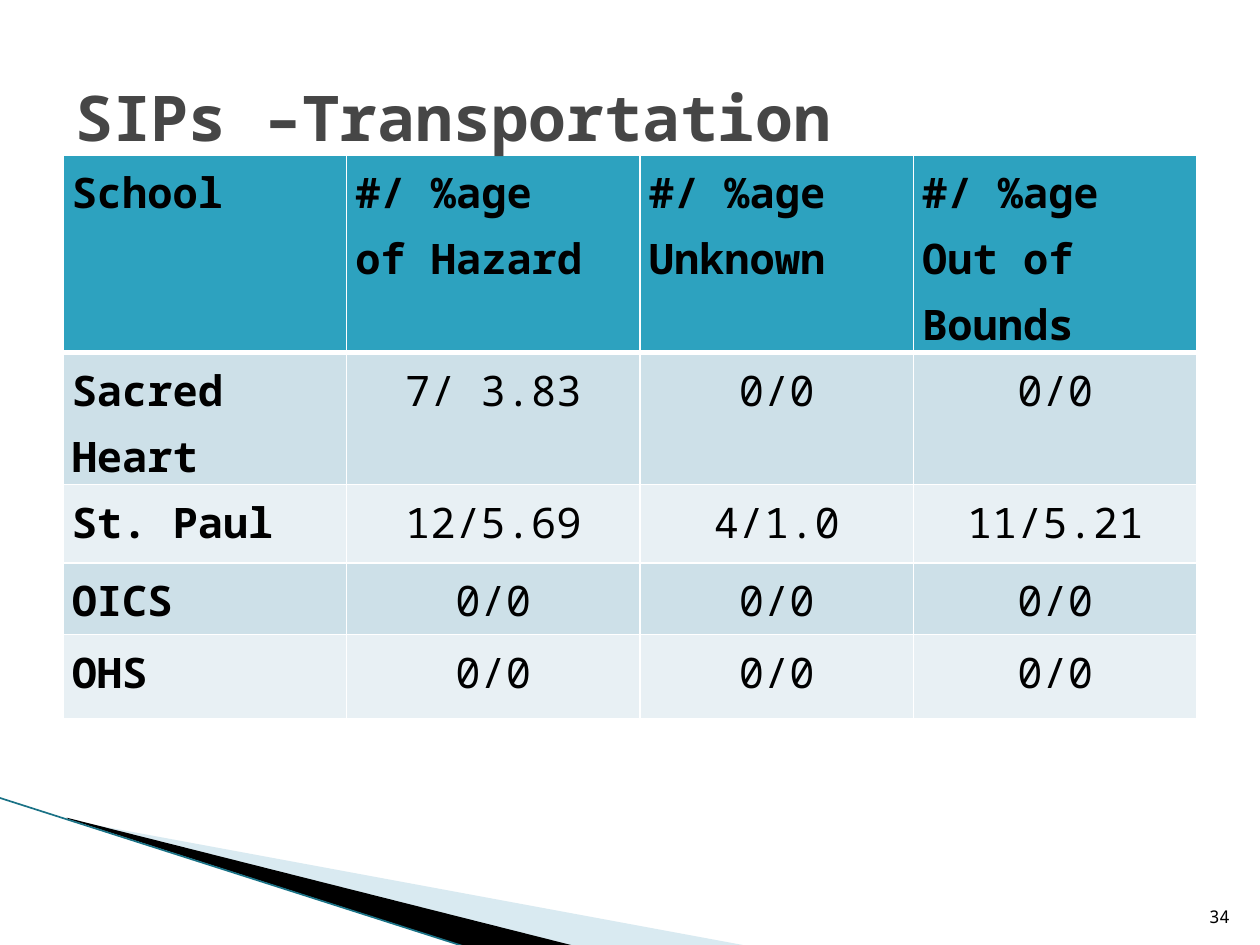
from dataclasses import dataclass
from typing import Optional

from lxml import etree
from pptx import Presentation
from pptx.dml.color import RGBColor
from pptx.enum.shapes import MSO_CONNECTOR
from pptx.enum.text import MSO_ANCHOR, PP_ALIGN
from pptx.oxml.ns import qn
from pptx.util import Inches, Pt

LEFT, CENTER, RIGHT = PP_ALIGN.LEFT, PP_ALIGN.CENTER, PP_ALIGN.RIGHT
MIDDLE, BOTTOM = MSO_ANCHOR.MIDDLE, MSO_ANCHOR.BOTTOM
STRAIGHT = MSO_CONNECTOR.STRAIGHT

FONT = "Noto Sans Mono"
BLACK, WHITE, TITLE_GRAY = "000000", "FFFFFF", "464646"
HEADER_FILL, BAND_FILLS = "2DA2BF", ("CDE0E8", "E8F0F4")

COLUMN_WIDTHS = (2.25, 2.33, 2.17, 2.25)
ROW_HEIGHTS = (0.47, 0.59, 0.62, 0.57, 0.67)
ROWS = (
    ("School", "#/ %age\vof Hazard", "#/ %age Unknown", "#/ %age Out of Bounds"),
    ("Sacred Heart", "7/ 3.83", "0/0", "0/0"),
    ("St. Paul", "12/5.69", "4/1.0", "11/5.21"),
    ("OICS", "0/0", "0/0", "0/0"),
    ("OHS", "0/0", "0/0", "0/0"),
)


@dataclass
class Wedge:
    points: tuple
    color: str
    opacity: Optional[int] = None


WEDGES = (
    Wedge(((0.55, 6.51), (5.95, 7.51), (4.56, 7.51), (0.55, 6.5)), "A0CBDC", 40),
    Wedge(((0.53, 6.49), (4.57, 7.51), (3.72, 7.52), (0.54, 6.5)), BLACK),
)


def rgb(color: str) -> RGBColor:
    return RGBColor.from_string(color)


def set_fill(fill, color: str) -> None:
    fill.solid()
    fill.fore_color.rgb = rgb(color)


def write_text(frame, text: str, *, size: float, color: str = BLACK, bold: bool = False,
               align=LEFT, spacing: float = 1.0) -> None:
    frame.word_wrap = True
    paragraph = frame.paragraphs[0]
    paragraph.text = text
    paragraph.alignment = align
    paragraph.line_spacing = spacing
    for run in paragraph.runs:
        run.font.name = FONT
        run.font.size = Pt(size)
        run.font.bold = bold
        run.font.color.rgb = rgb(color)


def add_text(slide, box: tuple, text: str, anchor, **text_format) -> None:
    frame = slide.shapes.add_textbox(*map(Inches, box)).text_frame
    frame.vertical_anchor = anchor
    write_text(frame, text, **text_format)


def add_wedge(slide, wedge: Wedge) -> None:
    start, *others = [(Inches(x), Inches(y)) for x, y in wedge.points]
    builder = slide.shapes.build_freeform(*start)
    builder.add_line_segments(others, close=True)
    shape = builder.convert_to_shape()
    shape.shadow.inherit = False
    shape.line.fill.background()
    set_fill(shape.fill, wedge.color)
    if wedge.opacity is not None:
        color = shape.fill._xPr.find(f".//{qn('a:srgbClr')}")
        etree.SubElement(color, qn("a:alpha"), val=str(wedge.opacity * 1000))


def add_edge_line(slide) -> None:
    ends = map(Inches, (-0.01, 6.33, 3.71, 7.52))
    line = slide.shapes.add_connector(STRAIGHT, *ends)
    line.line.color.rgb = rgb("1A7286")
    line.line.width = Pt(0.95)
    etree.SubElement(line._element.spPr, qn("a:effectLst"))


def set_borders(cell, bottom_width: float) -> None:
    """Draw white borders; they must precede the fill in the cell properties."""
    properties = cell._tc.get_or_add_tcPr()
    for index, side in enumerate(("lnL", "lnR", "lnT", "lnB")):
        width = bottom_width if side == "lnB" else 1
        border = etree.Element(qn(f"a:{side}"), w=str(Pt(width)))
        solid = etree.SubElement(border, qn("a:solidFill"))
        etree.SubElement(solid, qn("a:srgbClr"), val=WHITE)
        properties.insert(index, border)


def add_school_table(slide) -> None:
    table = slide.shapes.add_table(
        len(ROWS), len(COLUMN_WIDTHS), Inches(0.5), Inches(1.23),
        Inches(sum(COLUMN_WIDTHS)), Inches(sum(ROW_HEIGHTS))).table
    for column, width in zip(table.columns, COLUMN_WIDTHS):
        column.width = Inches(width)
    for row_index, (row, height, texts) in enumerate(zip(table.rows, ROW_HEIGHTS, ROWS)):
        row.height = Inches(height)
        is_header = row_index == 0
        fill = HEADER_FILL if is_header else BAND_FILLS[(row_index - 1) % 2]
        for column_index, (cell, text) in enumerate(zip(row.cells, texts)):
            is_label = is_header or column_index == 0
            cell.margin_left = cell.margin_right = Inches(0.07)
            cell.margin_top = cell.margin_bottom = 0
            write_text(cell.text_frame, text, size=24, bold=is_label,
                       align=LEFT if is_label else CENTER, spacing=1.15)
            set_fill(cell.fill, fill)
            set_borders(cell, bottom_width=3 if is_header else 1)
            if row_index == 1:
                top = cell._tc.tcPr.find(qn("a:lnT"))
                top.set("w", str(Pt(3)))


def main() -> None:
    presentation = Presentation()
    presentation.slide_width, presentation.slide_height = Inches(10), Inches(7.5)
    slide = presentation.slides.add_slide(presentation.slide_layouts[6])
    set_fill(slide.background.fill, WHITE)
    for wedge in WEDGES:
        add_wedge(slide, wedge)
    add_edge_line(slide)
    add_school_table(slide)
    add_text(slide, (9.46, 7.01, 0.4, 0.4), "34", BOTTOM, size=10, align=RIGHT)
    add_text(slide, (0.5, 0.3, 9, 1.25), "SIPs –Transportation", MIDDLE,
             size=36, color=TITLE_GRAY, bold=True)
    presentation.save("out.pptx")


if __name__ == "__main__":
    main()
